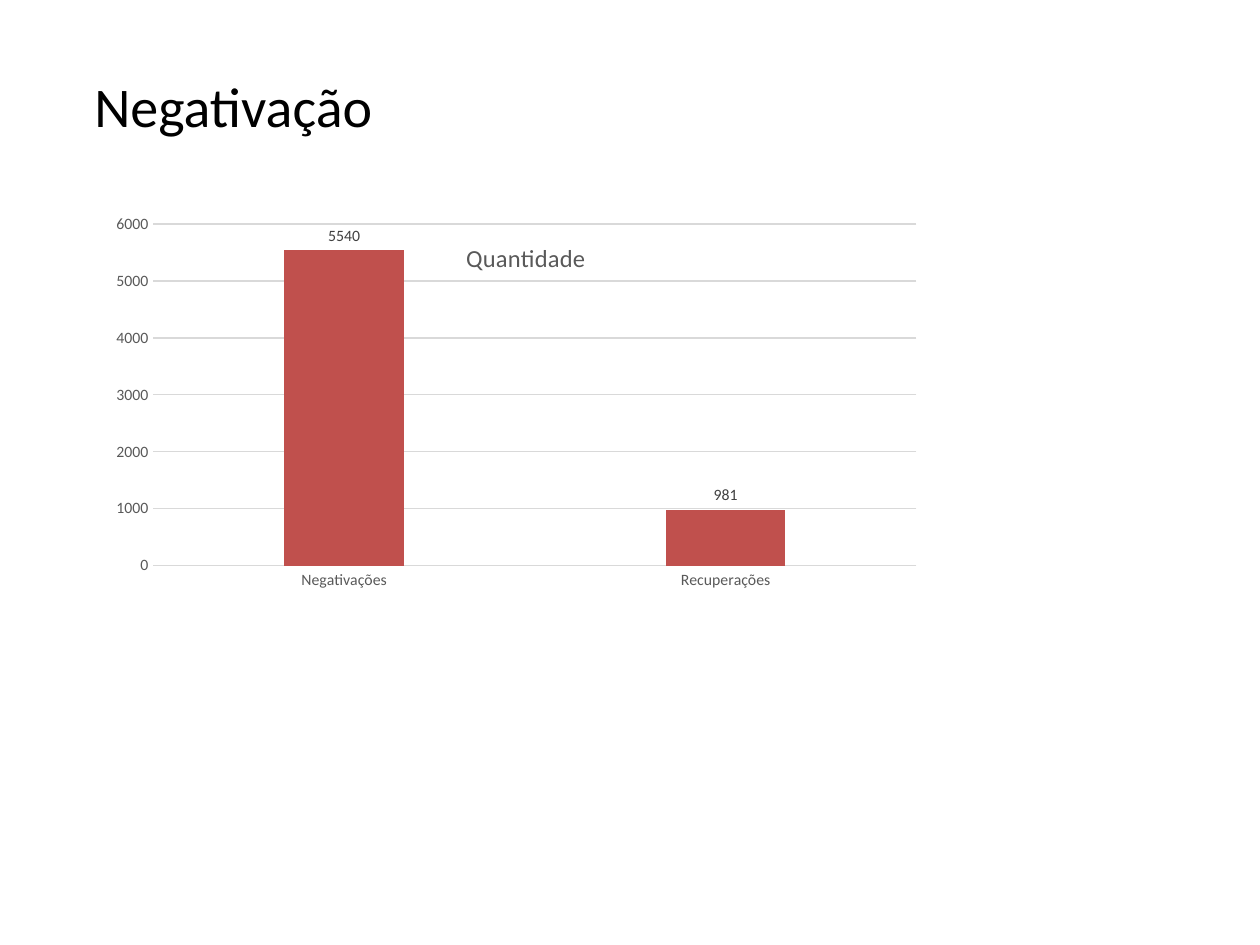
import pptx
import pptx.chart.data
import pptx.dml.color
import pptx.enum.chart
import pptx.enum.text
import pptx.oxml
import pptx.oxml.ns
import pptx.util

Pt = pptx.util.Pt
COLORS = {
    "title": "000000",
    "label": "404040",
    "axis": "595959",
    "grid": "D9D9D9",
    "bar": "C0504D",
}


def rgb(name):
    return pptx.dml.color.RGBColor.from_string(COLORS[name])


def style_font(font, size, color, name="Calibri"):
    font.name = name
    font.size = Pt(size)
    font.bold = False
    font.color.rgb = rgb(color)


def write_text(frame, text, size=12, color="title", align=pptx.enum.text.PP_ALIGN.LEFT):
    para = frame.paragraphs[0]
    para.alignment = align
    span = para.add_run()
    span.text = text
    style_font(span.font, size, color)


def make_layout(inner=False, **fractions):
    target = '<c:layoutTarget val="inner"/>' if inner else ""
    modes = "".join(f'<c:{key}Mode val="edge"/>' for key in "xy")
    values = "".join(f'<c:{key} val="{value}"/>' for key, value in fractions.items())
    namespace = pptx.oxml.ns.nsdecls("c")
    return pptx.oxml.parse_xml(
        f"<c:layout {namespace}><c:manualLayout>{target}{modes}{values}"
        "</c:manualLayout></c:layout>"
    )


def remove_layout(element):
    for layout in element.findall(pptx.oxml.ns.qn("c:layout")):
        element.remove(layout)


class SlideBuilder:
    def __init__(self, deck):
        self.page = deck.slides.add_slide(deck.slide_layouts[6])

    def heading(self, text, left, top, width, height):
        box = self.page.shapes.add_textbox(Pt(left), Pt(top), Pt(width), Pt(height))
        box.text_frame.word_wrap = True
        box.text_frame.vertical_anchor = pptx.enum.text.MSO_ANCHOR.TOP
        write_text(box.text_frame, text, size=32)

    def column_chart(self, name, values, left, top, width, height):
        data = pptx.chart.data.CategoryChartData()
        data.categories = list(values)
        data.add_series(name, list(values.values()))
        kind = pptx.enum.chart.XL_CHART_TYPE.COLUMN_CLUSTERED
        chart = self.page.shapes.add_chart(
            kind, Pt(left), Pt(top), Pt(width), Pt(height), data
        ).chart
        style_font(chart.font, 10, "title")
        chart.has_legend = False
        self.chart_title(chart, name)
        self.chart_axes(chart)
        self.chart_bars(chart.plots[0])
        area = chart.element.chart.plotArea
        remove_layout(area)
        area.insert(0, make_layout(inner=True, x=0.058, y=0.022, w=0.908, h=0.764))

    def chart_title(self, chart, text):
        chart.has_title = True
        title = chart.chart_title
        center = pptx.enum.text.PP_ALIGN.CENTER
        write_text(title.text_frame, text, size=14, color="axis", align=center)
        element = title.element if hasattr(title, "element") else title._element
        remove_layout(element)
        element.find(pptx.oxml.ns.qn("c:tx")).addnext(make_layout(x=0.425, y=0.05))
        overlay = element.find(pptx.oxml.ns.qn("c:overlay"))
        if overlay is None:
            overlay = pptx.oxml.parse_xml(
                f'<c:overlay {pptx.oxml.ns.nsdecls("c")} val="1"/>'
            )
            element.find(pptx.oxml.ns.qn("c:layout")).addnext(overlay)
        overlay.set("val", "1")

    def chart_axes(self, chart):
        for axis in (chart.category_axis, chart.value_axis):
            axis.major_tick_mark = pptx.enum.chart.XL_TICK_MARK.NONE
            axis.minor_tick_mark = pptx.enum.chart.XL_TICK_MARK.NONE
            style_font(axis.tick_labels.font, 9, "axis")
        chart.category_axis.has_major_gridlines = False
        value_axis = chart.value_axis
        value_axis.minimum_scale = 0
        value_axis.maximum_scale = 6000
        value_axis.major_unit = 1000
        value_axis.has_major_gridlines = True
        value_axis.format.line.fill.background()
        for item in (chart.category_axis, value_axis.major_gridlines):
            item.format.line.color.rgb = rgb("grid")
            item.format.line.width = Pt(0.75)

    def chart_bars(self, plot):
        plot.vary_by_categories = False
        plot.gap_width = 219
        plot.overlap = -27
        fill = plot.series[0].format.fill
        fill.solid()
        fill.fore_color.rgb = rgb("bar")
        labels = plot.series[0].data_labels
        labels.show_value = True
        labels.position = pptx.enum.chart.XL_LABEL_POSITION.OUTSIDE_END
        style_font(labels.font, 9, "label")


def main():
    deck = pptx.Presentation()
    deck.slide_width = Pt(720)
    deck.slide_height = Pt(540)
    builder = SlideBuilder(deck)
    builder.heading("Negativação", 46.8, 37.44, 626.4, 339.84)
    quantities = {"Negativações": 5540, "Recuperações": 981}
    builder.column_chart("Quantidade", quantities, 59.76, 122.4, 480.24, 255.6)
    deck.save("out.pptx")


if __name__ == "__main__":
    main()
